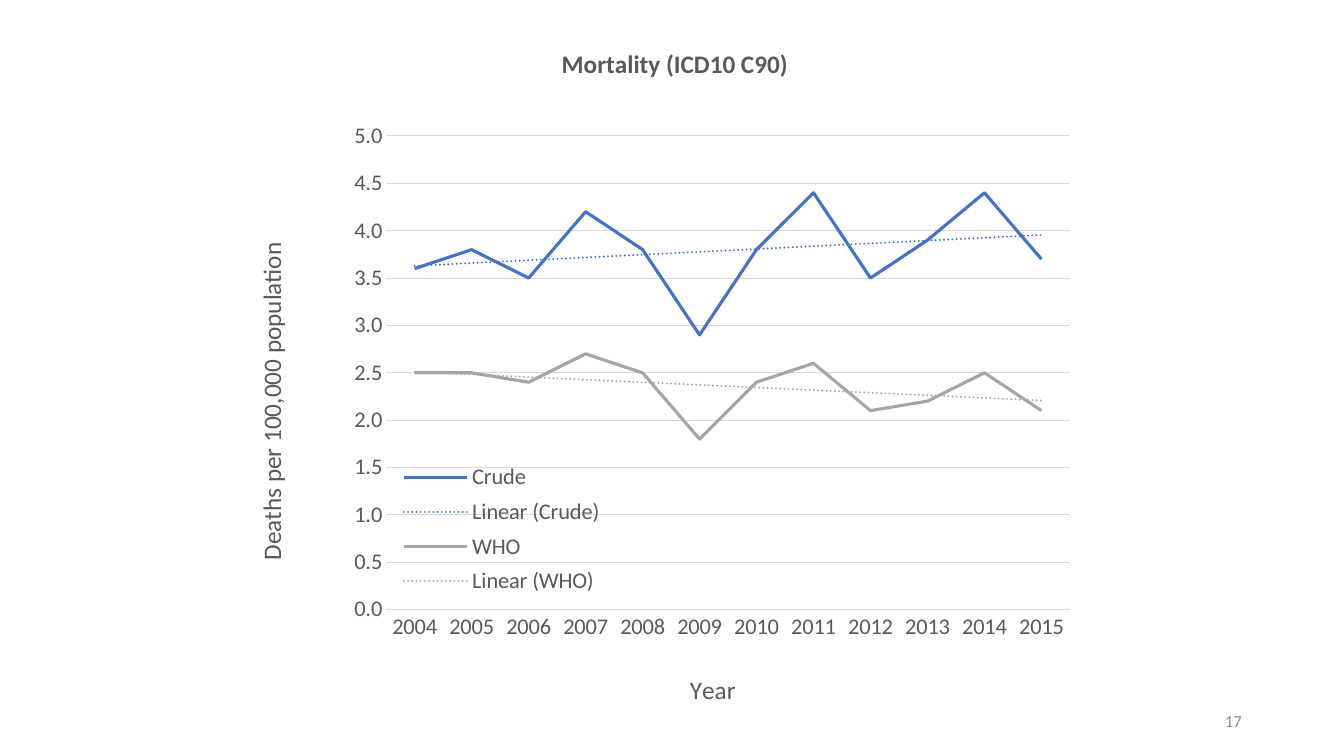
"""Build a slide with a line chart of death rates and their linear trends."""
from dataclasses import dataclass
from typing import Any

import pptx
import pptx.chart.data
import pptx.dml.color
import pptx.enum.chart
import pptx.enum.text
import pptx.oxml
import pptx.oxml.ns
import pptx.util

Pt = pptx.util.Pt
RGB = pptx.dml.color.RGBColor.from_string


@dataclass(frozen=True)
class Theme:
    """Colours, font and type sizes."""
    font: str = "Calibri"
    text: str = "595959"
    grid: str = "D9D9D9"
    page: str = "8C8C8C"
    blue: str = "4472C4"
    gray: str = "A5A5A5"
    head: float = 18
    label: float = 16
    small: float = 12


@dataclass(frozen=True)
class Line:
    """One plotted line and its trend."""
    name: str
    color: str
    rates: tuple[float, ...]


@dataclass(frozen=True)
class Spot:
    """Place of a chart part, as shares of the chart; size is optional."""
    x: float
    y: float
    w: float = 0
    h: float = 0


THEME = Theme()
LINES = (
    Line("Crude", THEME.blue,
         (3.6, 3.8, 3.5, 4.2, 3.8, 2.9, 3.8, 4.4, 3.5, 3.9, 4.4, 3.7)),
    Line("WHO", THEME.gray,
         (2.5, 2.5, 2.4, 2.7, 2.5, 1.8, 2.4, 2.6, 2.1, 2.2, 2.5, 2.1)),
)
YEARS = [str(year) for year in range(2004, 2016)]


def tune(thing: Any, **form: Any) -> None:
    """Set each named format value."""
    for name, value in form.items():
        setattr(thing, name, value)


def ink(font: Any, size: float, color: str = THEME.text, bold: bool = False) -> None:
    """Set the look of a font."""
    tune(font, name=THEME.font, size=Pt(size), bold=bold)
    font.color.rgb = RGB(color)


def stroke(line: Any, color: str, width: float) -> None:
    """Set the look of a line."""
    line.color.rgb = RGB(color)
    line.width = Pt(width)


def write(frame: Any, text: str, size: float, color: str = THEME.text,
          bold: bool = False) -> None:
    """Put one line of text in a frame."""
    frame.text = text
    ink(frame.paragraphs[0].runs[0].font, size, color, bold)


def make(tag: str, body: str) -> Any:
    """Make a chart element from its tag and inner XML."""
    names = pptx.oxml.ns.nsdecls("c", "a")
    return pptx.oxml.parse_xml(f"<c:{tag} {names}>{body}</c:{tag}>")


def place(part: Any, index: int, spot: Spot, inner: bool = False) -> None:
    """Fix the place of a chart part."""
    for old in part.xpath("c:layout"):
        part.remove(old)
    body = '<c:layoutTarget val="inner"/>' if inner else ""
    body += '<c:xMode val="edge"/><c:yMode val="edge"/>'
    for key in "xywh":
        value = getattr(spot, key)
        if value:
            body += f'<c:{key} val="{value}"/>'
    part.insert(index, make("layout", f"<c:manualLayout>{body}</c:manualLayout>"))


def trend(series: Any, color: str) -> None:
    """Add a dotted linear trend to a series."""
    body = (f'<c:spPr><a:ln w="{Pt(1.5)}" cap="rnd"><a:solidFill>'
            f'<a:srgbClr val="{color}"/></a:solidFill>'
            '<a:prstDash val="sysDot"/></a:ln></c:spPr>'
            '<c:trendlineType val="linear"/><c:dispRSqr val="0"/><c:dispEq val="0"/>')
    series._element.xpath("c:cat")[0].addprevious(make("trendline", body))


def style_axis(axis: Any, title: str, spot: Spot) -> None:
    """Set the title, ticks and labels of an axis."""
    none = pptx.enum.chart.XL_TICK_MARK.NONE
    tune(axis, major_tick_mark=none, minor_tick_mark=none)
    ink(axis.tick_labels.font, THEME.label)
    write(axis.axis_title.text_frame, title, THEME.head)
    place(axis.axis_title.element, 1, spot)


def draw_chart(slide: Any) -> None:
    """Draw the chart with its axes, trends and legend."""
    data = pptx.chart.data.CategoryChartData(number_format="0.0")
    data.categories = YEARS
    for line in LINES:
        data.add_series(line.name, line.rates)
    chart = slide.shapes.add_chart(
        pptx.enum.chart.XL_CHART_TYPE.LINE,
        Pt(172.08), Pt(8.64), Pt(610.56), Pt(520.56), data).chart
    ink(chart.font, THEME.label)
    write(chart.chart_title.text_frame, "Mortality (ICD10 C90)", THEME.head, bold=True)
    place(chart.chart_title.element, 1, Spot(0.37, 0.04))
    place(chart.element.xpath("//c:plotArea")[0], 0,
          Spot(0.17, 0.17, 0.8, 0.65), inner=True)

    years, rates = chart.category_axis, chart.value_axis
    style_axis(years, "Year", Spot(0.52, 0.9))
    style_axis(rates, "Deaths per 100,000 population", Spot(0.01, 0.31))
    stroke(years.format.line, THEME.grid, 0.75)
    tune(rates, minimum_scale=0, maximum_scale=5, major_unit=0.5,
         has_major_gridlines=True)
    tune(rates.tick_labels, number_format="0.0", number_format_is_linked=False)
    stroke(rates.major_gridlines.format.line, THEME.grid, 0.75)
    rates.format.line.fill.background()
    turn = rates.axis_title.element.xpath(".//a:bodyPr")[0]
    turn.set("rot", "-5400000")
    turn.set("vert", "horz")
    for cross in chart.element.xpath("//c:valAx[not(c:crossBetween)]/c:crosses"):
        between = make("crossBetween", "")
        between.set("val", "between")
        cross.addnext(between)

    plot = chart.plots[0]
    plot.vary_by_categories = False
    for line, series in zip(LINES, plot.series):
        series.smooth = False
        series.marker.style = pptx.enum.chart.XL_MARKER_STYLE.NONE
        stroke(series.format.line, line.color, 2.25)
        trend(series, line.color)

    chart.has_legend = True
    tune(chart.legend, position=pptx.enum.chart.XL_LEGEND_POSITION.RIGHT,
         include_in_layout=False)
    ink(chart.legend.font, THEME.label)
    place(chart.element.xpath("//c:legend")[0], 1, Spot(0.18, 0.61, 0.25, 0.2))


def draw_page(slide: Any) -> None:
    """Write the page number."""
    frame = slide.shapes.add_textbox(
        Pt(678.24), Pt(500.4), Pt(216), Pt(28.8)).text_frame
    tune(frame, word_wrap=True, vertical_anchor=pptx.enum.text.MSO_ANCHOR.MIDDLE)
    write(frame, "17", THEME.small, THEME.page)
    frame.paragraphs[0].alignment = pptx.enum.text.PP_ALIGN.RIGHT


def main() -> None:
    """Build and save the slide."""
    deck = pptx.Presentation()
    tune(deck, slide_width=Pt(960), slide_height=Pt(540))
    slide = deck.slides.add_slide(deck.slide_layouts[6])
    draw_chart(slide)
    draw_page(slide)
    deck.save("out.pptx")


if __name__ == "__main__":
    main()
